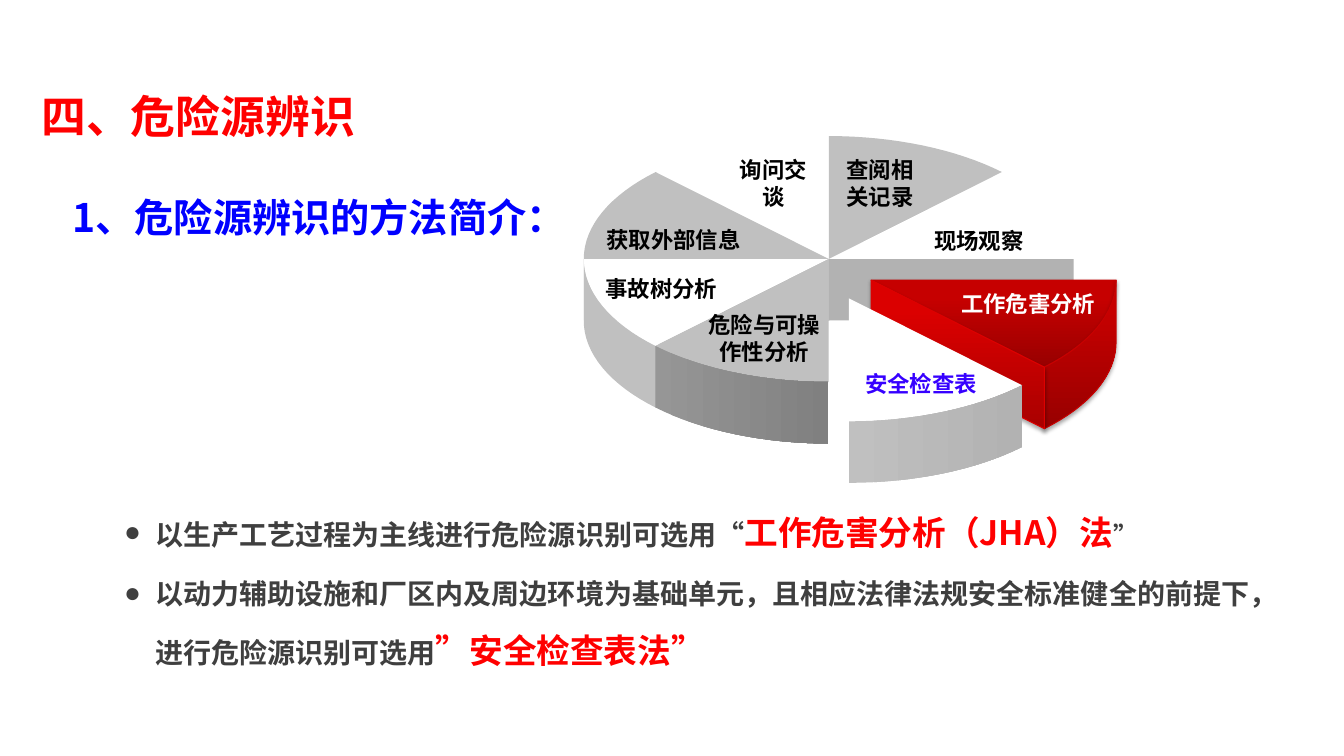
from math import cos, radians, sin

from lxml import etree
from pptx import Presentation
from pptx import util as u
from pptx.dml.color import RGBColor
from pptx.enum import shapes, text
from pptx.oxml import ns

FONT = "Noto Sans CJK SC"
RED, INK, WHITE = "FF0000", "3F3F3F", "FFFFFF"
SILVER, GREY, PALE = "C0C0C0", "B2B2B2", "DDDDDD"
RX, RY, DEEP = 2.43, 1.22, 0.61
HUB, JHA, CHECK = (8.22, 2.57), (8.64, 2.78), (8.42, 2.96)
DARK = ("980000", "C60000", 0.8, 90)
BRIGHT = ("A90000", "DB0000", 0.8, 90)


def rgb(code):
    return RGBColor.from_string(code)


def sub(node, tag, **attrs):
    return etree.SubElement(node, ns.qn(tag), **attrs)


def rim_at(hub, deg, drop=0):
    """Point on the ellipse, clockwise from east."""
    a = radians(deg)
    return hub[0] + RX * cos(a), hub[1] + RY * sin(a) + drop


def arc(hub, start, drop=0):
    """Points along one eighth of the ellipse."""
    return [rim_at(hub, start + 45 * i / 16, drop) for i in range(17)]


def write(para, words, size=16, color="000000"):
    run = para.add_run()
    run.text = words
    font = run.font
    font.size, font.bold = u.Pt(size), True
    font.color.rgb = rgb(color)
    font.name = FONT
    sub(run._r.get_or_add_rPr(), "a:ea", typeface=FONT)


class Deck:
    def __init__(self):
        self.show = Presentation()
        self.show.slide_width = u.Inches(13.33)
        self.show.slide_height = u.Inches(7.5)
        self.slide = self.show.slides.add_slide(self.show.slide_layouts[3])
        self.pie = self.slide.shapes.add_group_shape().shapes

    def frame(self, box, at, align=text.PP_ALIGN.LEFT, gap=1.0):
        """Place a text shape and return its first paragraph."""
        box.left, box.top, box.width, box.height = map(u.Inches, at)
        body = box.text_frame
        body.word_wrap = True
        body.auto_size = text.MSO_AUTO_SIZE.NONE
        body.vertical_anchor = text.MSO_ANCHOR.TOP
        para = body.paragraphs[0]
        para.alignment, para.line_spacing = align, gap
        para.space_before = u.Pt(0)
        return para

    def holder(self, index, at, gap=1.0):
        return self.frame(self.slide.placeholders[index], at, gap=gap)

    def bullet(self, index, at, runs, gap):
        para = self.holder(index, at, gap)
        props = para._p.get_or_add_pPr()
        props.set("marL", str(u.Inches(0.31)))
        props.set("indent", str(u.Inches(-0.31)))
        sub(props, "a:buChar", char="●")
        for words, size, color in runs:
            write(para, words, size=size, color=color)

    def heading(self, at, words):
        box = self.slide.shapes.add_textbox(0, 0, 0, 0)
        para = self.frame(box, at, gap=0.9)
        body = box.text_frame
        body.vertical_anchor = text.MSO_ANCHOR.MIDDLE
        body.margin_left = body.margin_right = u.Inches(0.07)
        body.margin_top = body.margin_bottom = u.Inches(0.04)
        write(para, words, size=28, color="0000FF")

    def label(self, at, words, color="000000"):
        box = self.pie.add_textbox(*map(u.Inches, at))
        write(self.frame(box, at, text.PP_ALIGN.CENTER), words, color=color)

    def paint(self, shape, fill, edge=None):
        """Fill with a colour or (from, to, end, angle); an edge adds a shadow."""
        if isinstance(fill, str):
            shape.fill.solid()
            shape.fill.fore_color.rgb = rgb(fill)
        else:
            first, last, end, angle = fill
            shape.fill.gradient()
            shape.fill.gradient_angle = angle
            stops = shape.fill.gradient_stops
            stops[0].color.rgb, stops[1].color.rgb = rgb(first), rgb(last)
            stops[0].position, stops[1].position = 0, end
        shape.shadow.inherit = False
        if not edge:
            shape.line.fill.background()
            return
        shape.line.color.rgb = rgb(edge)
        shape.line.width = u.Pt(0.75)
        effects = shape._element.spPr.find(ns.qn("a:effectLst"))
        shade = sub(effects, "a:outerShdw", blurRad=str(u.Pt(3.1)),
                    dist=str(u.Pt(1.8)), dir="5400000", rotWithShape="0")
        sub(sub(shade, "a:srgbClr", val="000000"), "a:alpha", val="35000")

    def outline(self, points, fill, edge=None):
        spots = [(u.Inches(x), u.Inches(y)) for x, y in points]
        build = self.pie.build_freeform(*spots[0])
        build.add_line_segments(spots[1:])
        self.paint(build.convert_to_shape(), fill, edge)

    def top(self, hub, start, fill, edge=None):
        self.outline([hub] + arc(hub, start), fill, edge)

    def rim(self, hub, start, fill, edge=None):
        lower = arc(hub, start, DEEP)[::-1]
        self.outline(arc(hub, start) + lower, fill, edge)

    def wall(self, hub, deg, fill, edge=None):
        """Cut face between the hub and the rim."""
        points = [hub, rim_at(hub, deg), rim_at(hub, deg, DEEP),
                  (hub[0], hub[1] + DEEP)]
        self.outline(points, fill, edge)

    def slab(self, left, fill):
        at = map(u.Inches, (left, HUB[1], RX, DEEP))
        self.paint(self.pie.add_shape(shapes.MSO_SHAPE.RECTANGLE, *at), fill)


def main():
    deck = Deck()
    write(deck.holder(0, (0.31, 0.83, 5.34, 0.64)), "四、危险源辨识",
          size=32, color=RED)
    deck.bullet(1, (1.13, 5.03, 10.52, 0.5), [
        ("以生产工艺过程为主线进行危险源识别可选用“", 20, INK),
        ("工作危害分析（JHA）法", 24, RED), ("”", 18, INK)], 1.0)
    deck.bullet(2, (1.13, 5.5, 11.84, 1.21), [
        ("以动力辅助设施和厂区内及周边环境为基础单元，且相应法律法规安全标准"
         "健全的前提下，进行危险源识别可选用", 20, INK),
        ("”安全检查表法”", 24, RED)], 1.5)
    deck.heading((0.65, 1.98, 6.92, 0.41), "1、危险源辨识的方法简介：")

    deck.wall(HUB, 225, PALE)
    deck.top(HUB, 270, SILVER)
    deck.wall(HUB, 315, GREY)
    deck.top(HUB, 180, SILVER)
    deck.slab(HUB[0] - RX, PALE)
    deck.top(HUB, 315, WHITE)
    deck.slab(HUB[0], GREY)
    deck.top(HUB, 135, WHITE)
    deck.rim(HUB, 135, SILVER)
    deck.wall(HUB, 135, GREY)
    deck.top(JHA, 0, DARK, "C80000")
    deck.rim(JHA, 0, DARK, "C80000")
    deck.wall(JHA, 45, BRIGHT, "DD0000")
    deck.top(CHECK, 45, WHITE)
    deck.rim(CHECK, 45, (SILVER, GREY, 1, 0))
    deck.top(HUB, 90, SILVER)
    deck.rim(HUB, 90, ("969696", "808080", 1, 0))

    deck.label((8.33, 3.62, 1.61, 0.37), "安全检查表", "3600FF")
    deck.label((9.4, 2.83, 1.6, 0.37), "工作危害分析", WHITE)
    for at, words in [
            ((8.82, 2.2, 1.78, 0.37), "现场观察"),
            ((8.26, 1.5, 0.94, 0.65), "查阅相关记录"),
            ((7.2, 1.5, 0.94, 0.65), "询问交谈"),
            ((5.79, 2.19, 1.78, 0.37), "获取外部信息"),
            ((5.87, 2.68, 1.38, 0.37), "事故树分析"),
            ((6.89, 3.04, 1.38, 0.65), "危险与可操作性分析")]:
        deck.label(at, words)
    deck.show.save("out.pptx")


if __name__ == "__main__":
    main()
